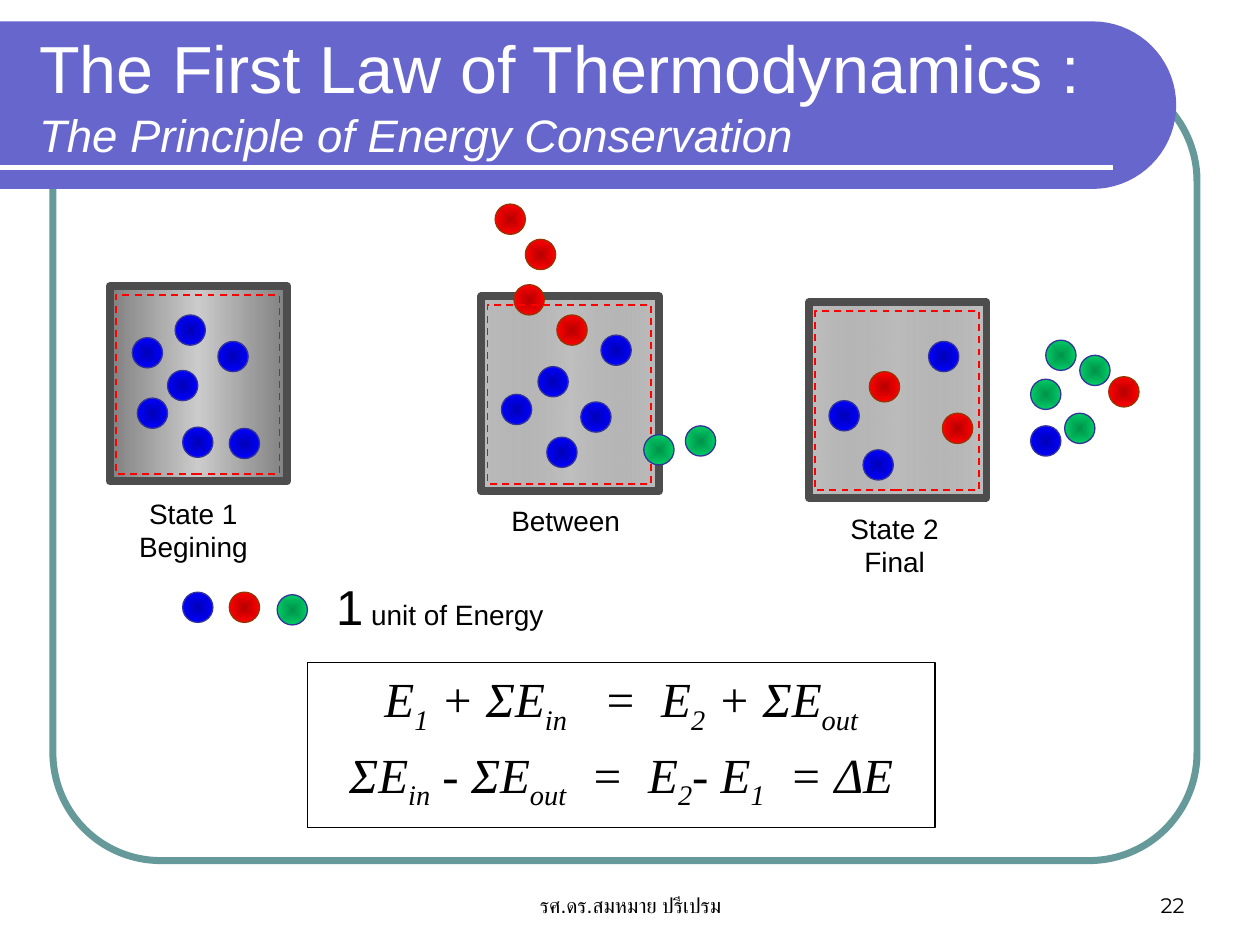
import math
from dataclasses import dataclass

from lxml import etree
from pptx import Presentation
from pptx.dml.color import RGBColor
from pptx.enum.dml import MSO_LINE
from pptx.enum.shapes import MSO_CONNECTOR, MSO_SHAPE
from pptx.enum.text import MSO_ANCHOR, PP_ALIGN
from pptx.oxml import parse_xml
from pptx.oxml.ns import qn
from pptx.util import Inches, Pt

RECTANGLE = MSO_SHAPE.RECTANGLE
ROUNDED = MSO_SHAPE.ROUNDED_RECTANGLE
OVAL = MSO_SHAPE.OVAL
STRAIGHT = MSO_CONNECTOR.STRAIGHT
DASH = MSO_LINE.DASH
LEFT, CENTER, RIGHT = PP_ALIGN.LEFT, PP_ALIGN.CENTER, PP_ALIGN.RIGHT
TOP, MIDDLE, BOTTOM = MSO_ANCHOR.TOP, MSO_ANCHOR.MIDDLE, MSO_ANCHOR.BOTTOM
DRAWING = "http://schemas.openxmlformats.org/drawingml/2006/main"
BALL_SIZE = 0.24
LINEAR = '<a:lin ang="0" scaled="1"/>'
RADIAL = '<a:path path="shape"><a:fillToRect l="50000" t="50000" r="50000" b="50000"/></a:path>'


@dataclass
class Energy:
    inner: str
    outer: str
    outline: str


@dataclass
class Ball:
    energy: Energy
    left: float
    top: float


@dataclass
class State:
    left: float
    top: float
    gradient: list
    balls: list
    label: str
    label_box: tuple
    leaving: list


BLUE = Energy("0000B6", "0000FF", "333399")
RED = Energy("B60000", "FF0000", "993300")
GREEN = Energy("009249", "00CC66", "333399")


def balls(energy: Energy, *places: tuple) -> list:
    return [Ball(energy, left, top) for left, top in places]


STATES = [
    State(0.87, 2.27, [("808080", 100), ("CBCBCB", 100), ("808080", 100)],
          balls(BLUE, (1.05, 2.68), (1.09, 3.16), (1.45, 3.39), (1.73, 2.71),
                (1.39, 2.5), (1.33, 2.94), (1.82, 3.4)),
          "State 1\vBegining", (0.87, 3.89, 1.33, 0.76), []),
    State(3.82, 2.35, [("808080", 52), ("C0C0C0", 100), ("808080", 52)],
          balls(BLUE, (4.27, 2.91), (3.98, 3.13), (4.34, 3.47), (4.77, 2.66), (4.61, 3.19))
          + balls(RED, (4.42, 2.5), (3.93, 1.62), (4.17, 1.9), (4.08, 2.26))
          + balls(GREEN, (5.44, 3.38)),
          "Between", (3.94, 3.95, 1.1, 0.31), balls(GREEN, (5.11, 3.45))),
    State(6.42, 2.4, [("C0C0C0", 100), ("808080", 52), ("C0C0C0", 100)],
          balls(BLUE, (6.85, 3.57), (6.58, 3.18), (8.18, 3.38), (7.37, 2.71))
          + balls(RED, (7.48, 3.28), (8.8, 2.99), (6.9, 2.95)),
          "State 2\vFinal", (6.53, 4.01, 1.14, 0.64),
          balls(GREEN, (8.3, 2.7), (8.45, 3.28), (8.57, 2.82), (8.18, 3.01))),
]

EQUATIONS = [
    [("E", "1"), (" + ΣE", "in"), ("   =  E", "2"), (" + ΣE", "out")],
    [("ΣE", "in"), (" - ΣE", "out"), ("  =  E", "2"), ("- E", "1"), ("  = ΔE", "")],
]


def color(value: str) -> RGBColor:
    return RGBColor.from_string(value)


def add_box(shapes, kind, box: tuple, line: str, width: float, fill: str = ""):
    shape = shapes.add_shape(kind, *map(Inches, box))
    shape.shadow.inherit = False
    shape.line.color.rgb = color(line)
    shape.line.width = Pt(width)
    if fill:
        shape.fill.solid()
        shape.fill.fore_color.rgb = color(fill)
    else:
        shape.fill.background()
    return shape


def set_gradient(shape, stops: list, direction: str) -> None:
    step = 100000 // (len(stops) - 1)
    entries = "".join(
        f'<a:gs pos="{index * step}"><a:srgbClr val="{value}">'
        f'<a:alpha val="{alpha * 1000}"/></a:srgbClr></a:gs>'
        for index, (value, alpha) in enumerate(stops))
    gradient = parse_xml(f'<a:gradFill xmlns:a="{DRAWING}" rotWithShape="1">'
                         f'<a:gsLst>{entries}</a:gsLst>{direction}</a:gradFill>')
    properties = shape.element.spPr
    properties.replace(properties.find(qn("a:noFill")), gradient)


def format_run(run, size: float, font: str = "Arial", value: str = "000000",
               italic: bool = False) -> None:
    run.font.size = Pt(size)
    run.font.name = font
    run.font.color.rgb = color(value)
    run.font.italic = italic


def add_text(shapes, box: tuple, text: str, size: float, align, anchor=TOP, font: str = "Arial"):
    shape = shapes.add_textbox(*map(Inches, box))
    frame = shape.text_frame
    frame.word_wrap = True
    frame.vertical_anchor = anchor
    frame.text = text
    paragraph = frame.paragraphs[0]
    paragraph.alignment = align
    for run in paragraph.runs:
        format_run(run, size, font)
    return shape


def add_ball(shapes, ball: Ball) -> None:
    energy = ball.energy
    shape = add_box(shapes, OVAL, (ball.left, ball.top, BALL_SIZE, BALL_SIZE), energy.outline, 0.75)
    set_gradient(shape, [(energy.inner, 100), (energy.outer, 100)], RADIAL)


def add_state(slide, state: State) -> None:
    shapes = slide.shapes.add_group_shape().shapes
    container = add_box(shapes, RECTANGLE, (state.left, state.top, 1.41, 1.55), "4D4D4D", 4.5)
    set_gradient(container, state.gradient, LINEAR)
    for ball in state.balls:
        add_ball(shapes, ball)
    boundary = add_box(shapes, RECTANGLE, (state.left + 0.05, state.top + 0.07, 1.3, 1.42), "FF0000", 1)
    boundary.line.dash_style = DASH
    add_text(shapes, state.label_box, state.label, 16, CENTER)
    for ball in state.leaving:
        add_ball(shapes, ball)


def add_background(slide) -> None:
    shapes = slide.shapes.add_group_shape().shapes
    frame = add_box(shapes, ROUNDED, (0.42, 0.58, 9.08, 6.25), "669999", 4)
    frame.adjustments[0] = 0.137
    radius, center_x, center_y = 0.665, 8.67, 0.835
    angles = [math.radians(degree) for degree in range(-90, 91, 5)]
    arc = [(Inches(center_x + radius * math.cos(angle)), Inches(center_y + radius * math.sin(angle)))
           for angle in angles]
    builder = shapes.build_freeform(0, Inches(center_y - radius))
    builder.add_line_segments(arc + [(0, Inches(center_y + radius))], close=True)
    banner = builder.convert_to_shape()
    banner.shadow.inherit = False
    banner.fill.solid()
    banner.fill.fore_color.rgb = color("6666CC")
    banner.line.fill.background()
    rule = shapes.add_connector(STRAIGHT, 0, Inches(1.33), Inches(8.83), Inches(1.33))
    rule.line.color.rgb = color("FFFFFF")
    rule.line.width = Pt(3)
    etree.SubElement(rule.element.spPr, qn("a:effectLst"))


def add_title(slide) -> None:
    title = slide.shapes.title
    slide.shapes.element.append(title.element)
    title.left, title.top, title.width, title.height = map(Inches, (0.21, 0.25, 8.77, 1))
    frame = title.text_frame
    frame.word_wrap = True
    frame.vertical_anchor = MIDDLE
    frame.text = "The First Law of Thermodynamics :\vThe Principle of Energy Conservation"
    paragraph = frame.paragraphs[0]
    paragraph.alignment = LEFT
    paragraph.line_spacing = 1.0
    heading, subheading = paragraph.runs
    format_run(heading, 38, value="FFFFFF")
    format_run(subheading, 26, value="FFFFFF", italic=True)


def add_equations(slide) -> None:
    frame = add_box(slide.shapes, RECTANGLE, (2.44, 5.26, 4.98, 1.31), "000000", 0.75, "FFFFFF").text_frame
    frame.word_wrap = True
    frame.vertical_anchor = TOP
    for index, terms in enumerate(EQUATIONS):
        paragraph = frame.add_paragraph() if index else frame.paragraphs[0]
        paragraph.alignment = CENTER
        paragraph.space_before = Pt(5)
        for term, subscript in terms:
            for text, baseline in ((term, 0), (subscript, -25000)):
                if text:
                    run = paragraph.add_run()
                    run.text = text
                    format_run(run, 28, "Times New Roman", italic=True)
                    run.font._element.set("baseline", str(baseline))


def add_legend(slide) -> None:
    shapes = slide.shapes.add_group_shape().shapes
    caption = add_text(shapes, (2.57, 4.53, 1.99, 0.43), "1", 28, LEFT)
    unit = caption.text_frame.paragraphs[0].add_run()
    unit.text = " unit of Energy"
    format_run(unit, 16)
    for ball in (Ball(BLUE, 1.45, 4.7), Ball(RED, 1.82, 4.7), Ball(GREEN, 2.2, 4.72)):
        add_ball(shapes, ball)


def main() -> None:
    presentation = Presentation()
    presentation.slide_width, presentation.slide_height = Inches(10), Inches(7.5)
    slide = presentation.slides.add_slide(presentation.slide_layouts[5])
    add_background(slide)
    add_text(slide.shapes, (3.42, 6.83, 3.17, 0.5), "รศ.ดร.สมหมาย ปรีเปรม", 12, CENTER, BOTTOM)
    add_text(slide.shapes, (7.17, 6.83, 2.33, 0.5), "22", 12, RIGHT, BOTTOM, "Montserrat")
    add_equations(slide)
    add_title(slide)
    for state in STATES:
        add_state(slide, state)
    add_legend(slide)
    presentation.save("out.pptx")


if __name__ == "__main__":
    main()
